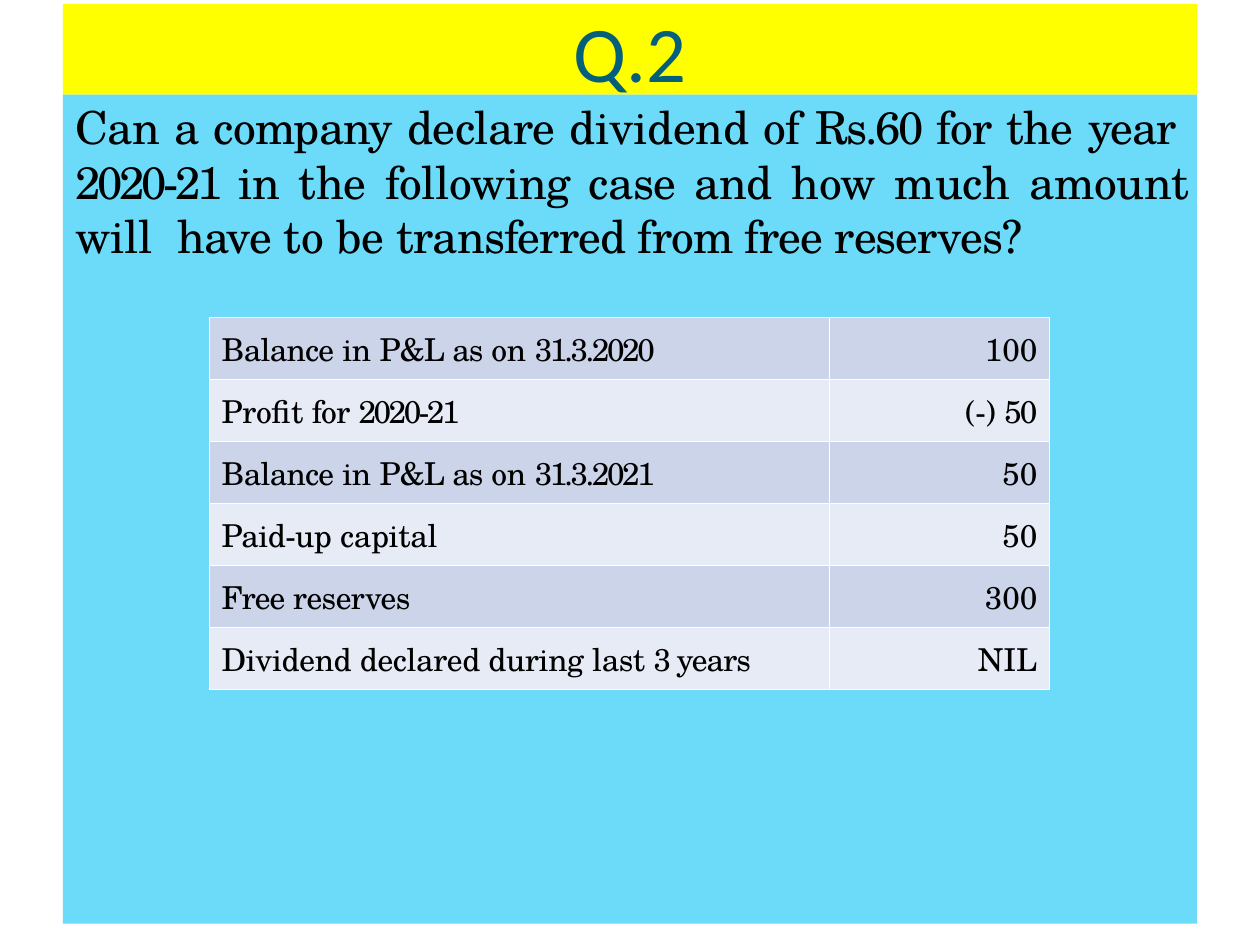
from pptx import Presentation
from pptx.dml.color import RGBColor
from pptx.enum.shapes import MSO_SHAPE
from pptx.enum.text import MSO_ANCHOR, MSO_AUTO_SIZE, PP_ALIGN
from pptx.oxml import parse_xml
from pptx.oxml.ns import nsdecls
from pptx.util import Cm, Pt

RECTANGLE = MSO_SHAPE.RECTANGLE
TOP = MSO_ANCHOR.TOP
NO_AUTOFIT = MSO_AUTO_SIZE.NONE
LEFT, CENTER, RIGHT, JUSTIFY = PP_ALIGN.LEFT, PP_ALIGN.CENTER, PP_ALIGN.RIGHT, PP_ALIGN.JUSTIFY

THEME = {
    "heading_font": "Calibri", "body_font": "TeX Gyre Schola",
    "heading_size": 45, "question_size": 26, "table_size": 18,
    "heading": "04607A", "text": "000000",
    "heading_band": "FFFF00", "panel": "6BDBF9",
    "row_fills": ("CCD4EA", "E7EBF5"), "border": "FFFFFF", "border_width": 1,
}

TITLE = [("Q.2", 0)]
QUESTION = [
    ("Can ", -0.2), ("a ", -0.7), ("company ", -0.4), ("declare ", -0.3),
    ("dividend of ", -0.2), ("Rs.60 ", -1.2), ("for ", -0.5), ("the ", -0.1),
    ("year  ", -0.6), ("2020-21 ", -1.9), ("in ", -0.3), ("the ", -0.1),
    ("following case and ", -0.3), ("how ", -0.2), ("much ", -0.1),
    ("amount will  ", -0.2), ("have ", -0.6), ("to be ", -0.1),
    ("transferred from free ", -0.5), ("reserves?", -0.6),
]
BALANCE = [("Balance ", -0.4), ("in ", -0.2), ("P&L ", -0.7), ("as ", -0.5), ("on ", -0.1)]
ROWS = [
    (BALANCE + [("31.3.2020", -1.4)], [("100", 0)]),
    ([("Profit ", -0.2), ("for ", -0.3), ("2020-21", -1.4)], [("(-) ", -0.2), ("50", -1.2)]),
    (BALANCE + [("31.3.2021", -1.4)], [("50", -0.1)]),
    ([("Paid-up ", -0.3), ("capital", -0.2)], [("50", -0.1)]),
    ([("Free ", -0.6), ("reserves", -0.3)], [("3", -0.1), ("00", 0)]),
    ([("Dividend declared during last ", -0.2), ("3 ", -1.8), ("years", -0.5)], [("NIL", 0)]),
]

PANEL_LEFT, PANEL_WIDTH = 1.27, 22.86
BAND_TOP, BAND_HEIGHT, PANEL_HEIGHT = 0.08, 1.83, 16.71
PANEL_TOP = BAND_TOP + BAND_HEIGHT
TABLE_LEFT, TABLE_TOP, ROW_HEIGHT = 4.22, 6.4, 1.25
COLUMN_WIDTHS = (12.5, 4.44)
CELL_SIDE, CELL_TOP = 0.25, 0.17


def write(paragraph, runs, font, size, color, alignment):
    paragraph.alignment = alignment
    paragraph.space_before = Pt(0)
    for text, spacing in runs:
        run = paragraph.add_run()
        run.text = text
        run.font.name = font
        run.font.size = Pt(size)
        run.font.color.rgb = RGBColor.from_string(color)
        if spacing:
            run.font._element.set("spc", str(round(spacing * 100)))


def prepare_frame(frame):
    frame.word_wrap = True
    frame.auto_size = NO_AUTOFIT
    frame.vertical_anchor = TOP
    frame.margin_left = frame.margin_right = frame.margin_bottom = 0
    frame.margin_top = Cm(0.07)


def add_panel(slide, top, height, color):
    panel = slide.shapes.add_shape(
        RECTANGLE, Cm(PANEL_LEFT), Cm(top), Cm(PANEL_WIDTH), Cm(height))
    panel.shadow.inherit = False
    panel.fill.solid()
    panel.fill.fore_color.rgb = RGBColor.from_string(color)
    panel.line.fill.background()
    return panel


def format_cell(cell, runs, alignment, fill):
    cell.margin_left = cell.margin_right = Cm(CELL_SIDE)
    cell.margin_top, cell.margin_bottom = Cm(CELL_TOP), 0
    cell.vertical_anchor = TOP
    properties = cell._tc.get_or_add_tcPr()
    for side in ("lnL", "lnR", "lnT", "lnB"):
        properties.append(parse_xml(
            f'<a:{side} {nsdecls("a")} w="{Pt(THEME["border_width"])}"><a:solidFill>'
            f'<a:srgbClr val="{THEME["border"]}"/></a:solidFill></a:{side}>'))
    cell.fill.solid()
    cell.fill.fore_color.rgb = RGBColor.from_string(fill)
    write(cell.text_frame.paragraphs[0], runs, THEME["body_font"],
          THEME["table_size"], THEME["text"], alignment)


def add_title(slide):
    band = add_panel(slide, BAND_TOP, BAND_HEIGHT, THEME["heading_band"])
    title = slide.shapes.title
    band.element.addnext(title.element)
    title.left, title.top, title.width, title.height = Cm(11.5), Cm(0), Cm(2.4), Cm(1.98)
    prepare_frame(title.text_frame)
    write(title.text_frame.paragraphs[0], TITLE, THEME["heading_font"],
          THEME["heading_size"], THEME["heading"], CENTER)


def add_question(slide):
    add_panel(slide, PANEL_TOP, PANEL_HEIGHT, THEME["panel"])
    question = slide.shapes.add_textbox(Cm(1.52), Cm(1.93), Cm(22.45), Cm(3.38))
    prepare_frame(question.text_frame)
    write(question.text_frame.paragraphs[0], QUESTION, THEME["body_font"],
          THEME["question_size"], THEME["text"], JUSTIFY)


def add_figures(slide):
    table = slide.shapes.add_table(
        len(ROWS), len(COLUMN_WIDTHS), Cm(TABLE_LEFT), Cm(TABLE_TOP),
        Cm(sum(COLUMN_WIDTHS)), Cm(ROW_HEIGHT * len(ROWS))).table
    table.first_row = table.horz_banding = False
    for column, width in zip(table.columns, COLUMN_WIDTHS):
        column.width = Cm(width)
    for index, (row, contents) in enumerate(zip(table.rows, ROWS)):
        row.height = Cm(ROW_HEIGHT)
        fill = THEME["row_fills"][index % 2]
        for cell, runs, alignment in zip(row.cells, contents, (LEFT, RIGHT)):
            format_cell(cell, runs, alignment, fill)


def main():
    presentation = Presentation()
    presentation.slide_width, presentation.slide_height = Cm(25.4), Cm(19.05)
    slide = presentation.slides.add_slide(presentation.slide_layouts[5])
    add_title(slide)
    add_question(slide)
    add_figures(slide)
    presentation.save("out.pptx")


if __name__ == "__main__":
    main()
